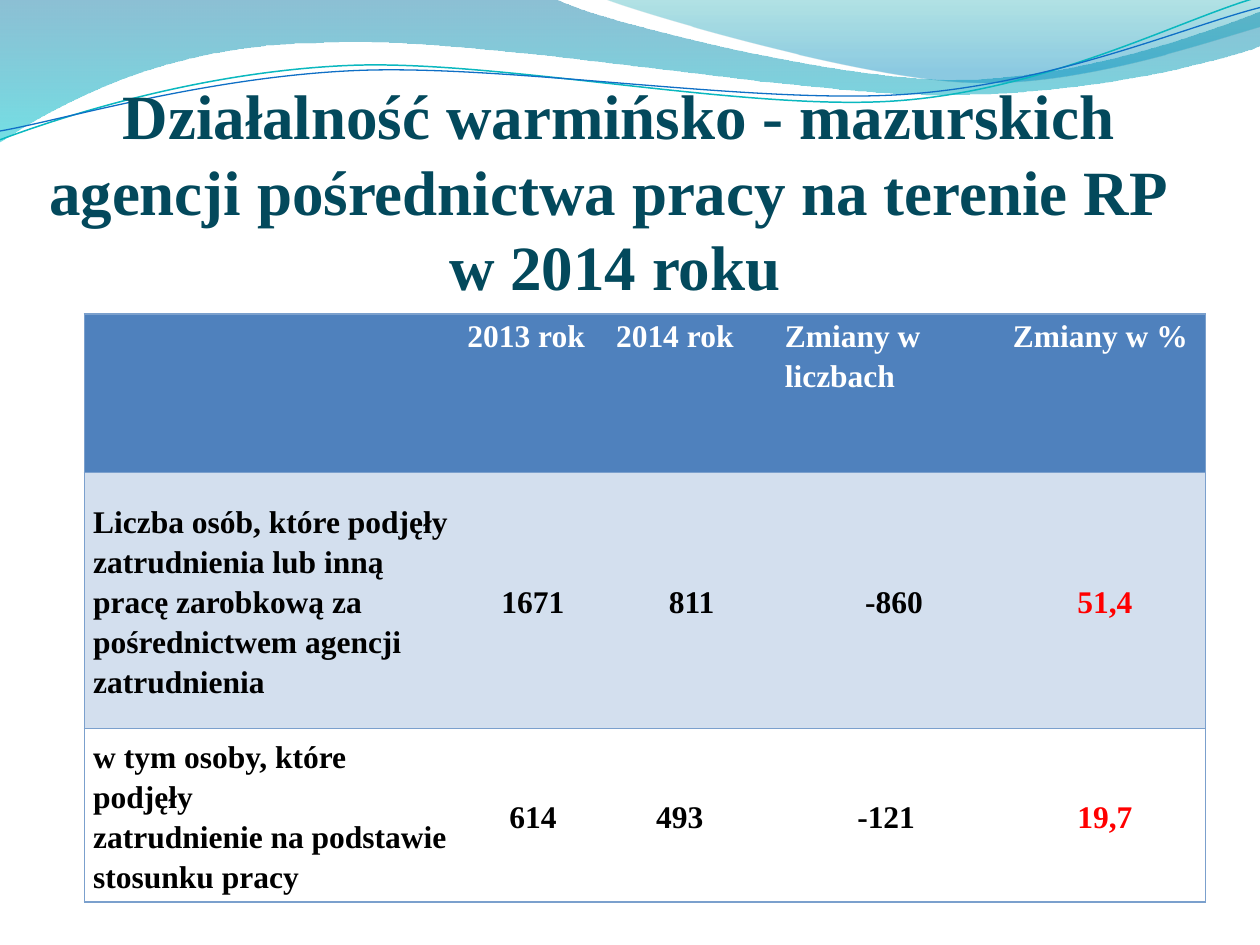
from lxml.etree import SubElement
from pptx import Presentation
from pptx.dml.color import RGBColor as RGB
from pptx.enum.text import MSO_ANCHOR as ANCHOR, PP_ALIGN as ALIGN
from pptx.oxml import parse_xml
from pptx.oxml.ns import nsdecls, qn
from pptx.util import Inches, Pt

THEME = {
    "font": "Times New Roman", "lead_font": "Calibri",
    "title": "03495C", "lead": "04617B", "head": "FFFFFF", "body": "000000", "alert": "FF0000",
    "head_fill": "4F81BD", "band_fill": "D3DFEE", "border": "7BA0CD",
    "title_size": 36, "lead_size": 20, "table_size": 18,
}

TITLE = ["Działalność warmińsko - mazurskich agencji pośrednictwa pracy na terenie RP ", "w 2014 roku"]
ROWS = [
    [[], ["2013 rok"], ["2014 rok"], ["Zmiany w liczbach"], ["Zmiany w %"]],
    [["Liczba osób, które podjęły zatrudnienia lub inną pracę zarobkową za pośrednictwem agencji zatrudnienia"],
     ["1671"], ["811"], [" -860"], ["51,4"]],
    [["w tym osoby, które podjęły", "zatrudnienie na podstawie", "stosunku pracy"],
     ["614"], ["493"], ["-121 "], ["19,7"]],
]
COL_WIDTHS = [2.97, 1.18, 1.34, 1.81, 1.6]
ROW_HEIGHTS = [1.26, 2.03, 1.27]
ROW_FILLS = [THEME["head_fill"], THEME["band_fill"], None]
EXTRA_RIGHT = {(2, 2): 0.19}

WAVES = [
    {"start": (0, -0.01), "fill": [(0, "0074A1", 45), (1, "00C6CF", 55)],
     "path": [(4.4, -0.01), (4.76, 0.17, 6.64, 0.63, 7.58, 0.63), (8.53, 0.63, 9.58, 0.26, 10, 0.09),
              (10.01, 0.36), (9.83, 0.44, 8.7, 0.76, 7.46, 0.75), (6.22, 0.75, 3.82, 0.28, 2.57, 0.34),
              (1.29, 0.35, 0.46, 0.83, -0.01, 1.13), (0, -0.01)]},
    {"start": (4.79, -0.01), "fill": [(0, "00A1A9", 30), (0.8, "008BBF", 45)],
     "path": [(5.09, 0.11, 6.82, 0.62, 7.69, 0.65), (8.56, 0.69, 9.61, 0.32, 10, 0.21), (10, 0),
              (4.79, -0.01)]},
    {"start": (0, 1.11), "line": ("0AB8BF", 0.85),
     "path": [(0.48, 0.93, 1.58, 0.57, 2.77, 0.52), (3.95, 0.47, 5.93, 0.89, 7.13, 0.8),
              (8.33, 0.71, 9.38, 0.15, 9.98, -0.02)]},
    {"start": (0, 1.04), "line": ("0F6FC6", 0.75),
     "path": [(0.47, 0.96, 1.64, 0.61, 2.83, 0.56), (4.03, 0.51, 5.97, 0.83, 7.17, 0.75),
              (8.36, 0.67, 9.41, 0.21, 10, 0.06)]},
]


def bend_segments(sp, path):
    segments = iter(list(sp._element.iter(qn("a:lnTo"))))
    for step in path:
        first = next(segments)
        if len(step) == 6:
            first.tag = qn("a:cubicBezTo")
            for _ in range(2):
                extra = next(segments)
                first.append(extra[0])
                extra.getparent().remove(extra)


def add_wave(s, start, path, fill=None, line=None):
    points = [(Inches(step[i]), Inches(step[i + 1])) for step in path for i in range(0, len(step), 2)]
    builder = s.shapes.build_freeform(Inches(start[0]), Inches(start[1]))
    builder.add_line_segments(points, close=bool(fill))
    sp = builder.convert_to_shape()
    bend_segments(sp, path)
    sp.shadow.inherit = False
    if line:
        sp.fill.background()
        sp.line.color.rgb = RGB.from_string(line[0])
        sp.line.width = Pt(line[1])
        return
    sp.line.fill.background()
    sp.fill.gradient()
    sp.fill.gradient_angle = 270
    for stop, (position, color, _) in zip(sp.fill.gradient_stops, fill):
        stop.position = position
        stop.color.rgb = RGB.from_string(color)
    for node, (_, _, opacity) in zip(sp._element.spPr.iter(qn("a:srgbClr")), fill):
        SubElement(node, qn("a:alpha"), val=str(opacity * 1000))


def add_run(p, text, font=THEME["font"], size=THEME["table_size"], color=THEME["body"], bold=True):
    r = p.add_run()
    r.text = text
    r.font.name, r.font.size, r.font.bold = font, Pt(size), bold
    r.font.color.rgb = RGB.from_string(color)


def set_borders(cell, sides):
    tc_pr = cell._tc.get_or_add_tcPr()
    for i, side in enumerate(sides):
        tc_pr.insert(i, parse_xml(
            f'<a:ln{side} {nsdecls("a")} w="12700"><a:solidFill>'
            f'<a:srgbClr val="{THEME["border"]}"/></a:solidFill></a:ln{side}>'))


def add_title(s):
    tf = s.shapes.add_textbox(Inches(0.35), Inches(0.28), Inches(9.06), Inches(2.13)).text_frame
    tf.word_wrap = True
    tf.vertical_anchor = ANCHOR.BOTTOM
    tf.margin_left = tf.margin_right = tf.margin_bottom = 0
    p = tf.paragraphs[0]
    p.alignment = ALIGN.CENTER
    add_run(p, " ", font=THEME["lead_font"], size=THEME["lead_size"], color=THEME["lead"], bold=False)
    for i, line in enumerate(TITLE):
        if i:
            p.add_line_break()
        add_run(p, line, size=THEME["title_size"], color=THEME["title"])


def add_results(s):
    last = len(COL_WIDTHS) - 1
    frame = s.shapes.add_table(len(ROWS), len(COL_WIDTHS), Inches(0.67), Inches(2.49),
                               Inches(sum(COL_WIDTHS)), Inches(sum(ROW_HEIGHTS)))
    table = frame.table
    table.first_row = table.horz_banding = False
    table._tbl.tblPr.find(qn("a:tableStyleId")).text = "{2D5ABB26-0587-4C30-8999-92F81FD0307C}"
    for col, width in zip(table.columns, COL_WIDTHS):
        col.width = Inches(width)
    for row, height in zip(table.rows, ROW_HEIGHTS):
        row.height = Inches(height)
    for i, row in enumerate(ROWS):
        for j, lines in enumerate(row):
            cell = table.cell(i, j)
            cell.margin_left = Inches(0.07)
            cell.margin_right = Inches(0.07 + EXTRA_RIGHT.get((i, j), 0))
            cell.margin_top = cell.margin_bottom = 0
            cell.vertical_anchor = ANCHOR.MIDDLE if i else ANCHOR.TOP
            if ROW_FILLS[i]:
                cell.fill.solid()
                cell.fill.fore_color.rgb = RGB.from_string(ROW_FILLS[i])
            else:
                cell.fill.background()
            set_borders(cell, ["L"] * (j == 0) + ["R"] * (j == last) + ["T", "B"])
            color = THEME["head"] if i == 0 else THEME["alert"] if j == last else THEME["body"]
            for n, line in enumerate(lines):
                p = cell.text_frame.add_paragraph() if n else cell.text_frame.paragraphs[0]
                p.line_spacing = 1.15
                p.alignment = ALIGN.CENTER if i and j else ALIGN.LEFT
                add_run(p, line, color=color)


def main():
    prs = Presentation()
    prs.slide_width, prs.slide_height = Inches(10), Inches(7.5)
    s = prs.slides.add_slide(prs.slide_layouts[6])
    for wave in WAVES:
        add_wave(s, **wave)
    add_title(s)
    add_results(s)
    prs.save("out.pptx")


if __name__ == "__main__":
    main()
